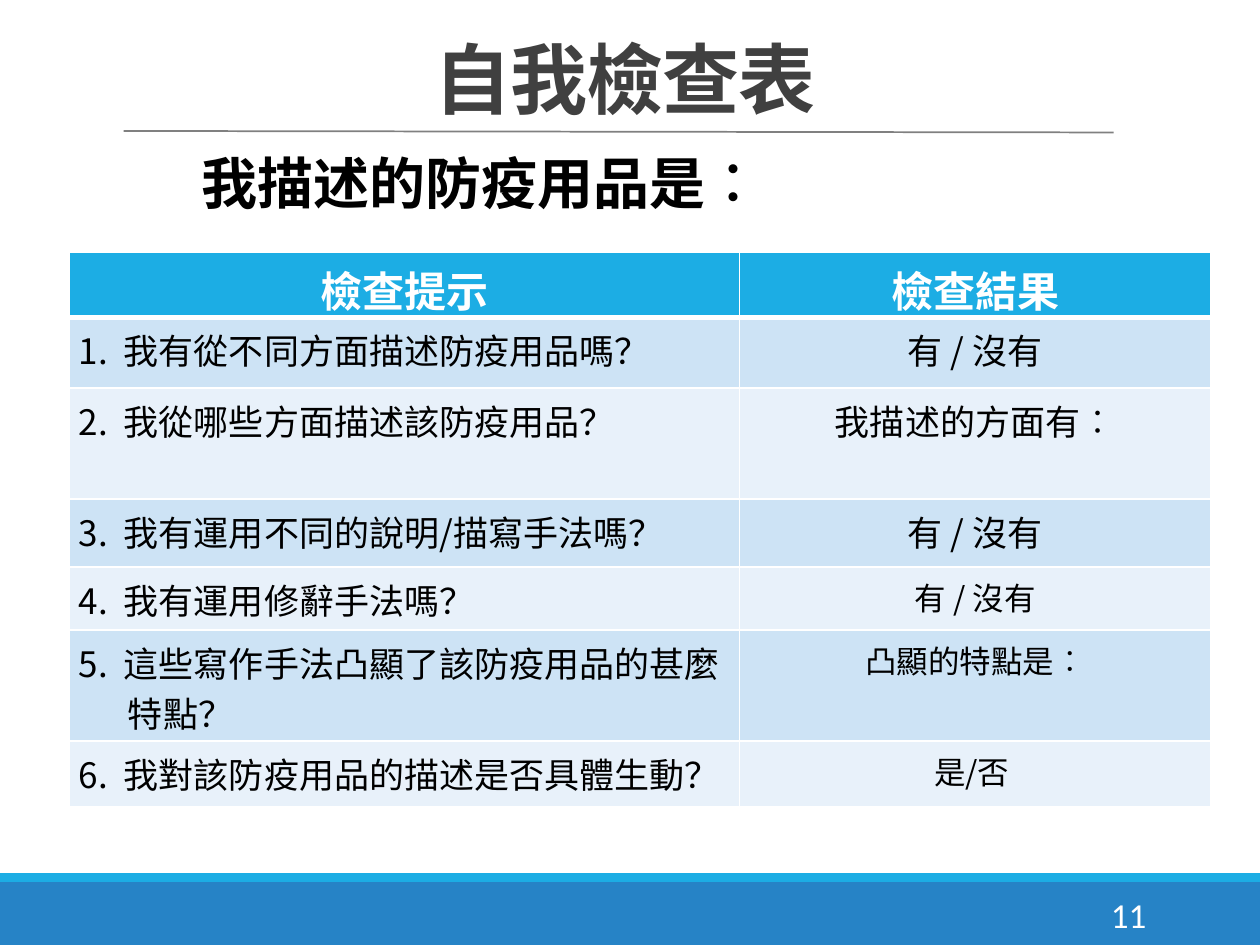
"""Builds the self-check slide for describing an epidemic-prevention item."""
import pptx
import pptx.dml.color
import pptx.enum.shapes
import pptx.enum.text
import pptx.oxml.ns
import pptx.util
from lxml import etree

Cm = pptx.util.Cm
Pt = pptx.util.Pt
ALIGN = pptx.enum.text.PP_ALIGN
ANCHOR = pptx.enum.text.MSO_ANCHOR
qn = pptx.oxml.ns.qn

COLORS = {
    "footer": "2683C6",
    "accent": "1CADE4",
    "title": "404040",
    "rule": "808080",
    "odd": "CDE3F5",
    "even": "E8F1FA",
    "text": "000000",
    "white": "FFFFFF",
}
CJK_FONT = "Noto Sans CJK SC"

COLUMN_WIDTHS = [13.51, 9.5]
HEADER = ("檢查提示", "檢查結果")
HEADER_HEIGHT = 1.32
# Each check: prompt, alignment, hanging indent, result, result size, row height.
CHECKS = [
    ("我有從不同方面描述防疫用品嗎？", ALIGN.JUSTIFY, 0.76, "有 / 沒有", 20, 1.42),
    ("我從哪些方面描述該防疫用品？", ALIGN.JUSTIFY, 0.76, "我描述的方面有︰", 20, 2.24),
    ("我有運用不同的說明/描寫手法嗎？", ALIGN.JUSTIFY, 1.27, "有 / 沒有", 20, 1.37),
    ("我有運用修辭手法嗎？", ALIGN.LEFT, 0.99, "有 / 沒有", 18, 1.27),
    ("這些寫作手法凸顯了該防疫用品的甚麼  特點？", ALIGN.LEFT, 0.99, "凸顯的特點是︰", 18, 2.24),
    ("我對該防疫用品的描述是否具體生動？", ALIGN.LEFT, 0.99, "是/否 ", 18, 1.32),
]


def rgb(name):
    return pptx.dml.color.RGBColor.from_string(COLORS[name])


def write(frame, text, size, color, align=ALIGN.LEFT, bold=False, font=CJK_FONT):
    frame.text = text
    frame.word_wrap = True
    paragraph = frame.paragraphs[0]
    paragraph.alignment = align
    run = paragraph.runs[0]
    run.font.name = font
    run.font.size = Pt(size)
    run.font.bold = bold
    run.font.color.rgb = rgb(color)
    etree.SubElement(run.font._element, qn("a:ea")).set("typeface", font)
    return paragraph


def add_band(slide, top, height, color):
    band = slide.shapes.add_shape(
        pptx.enum.shapes.MSO_SHAPE.RECTANGLE, 0, Cm(top), Cm(25.4), Cm(height))
    band.shadow.inherit = False
    band.fill.solid()
    band.fill.fore_color.rgb = rgb(color)
    band.line.fill.background()


def add_text(slide, left, top, width, height, text, size, color, **style):
    box = slide.shapes.add_textbox(Cm(left), Cm(top), Cm(width), Cm(height))
    write(box.text_frame, text, size, color, **style)
    return box.text_frame


def add_rule(slide):
    rule = slide.shapes.add_connector(
        pptx.enum.shapes.MSO_CONNECTOR.STRAIGHT, Cm(2.49), Cm(2.64), Cm(22.45), Cm(2.67))
    rule.line.color.rgb = rgb("rule")
    rule.line.width = Pt(1)
    etree.SubElement(rule._element.spPr, qn("a:effectLst"))


def set_borders(cell, top=1, bottom=1):
    properties = cell._tc.get_or_add_tcPr()
    widths = {"lnL": 1, "lnR": 1, "lnT": top, "lnB": bottom}
    for position, (side, width) in enumerate(widths.items()):
        border = etree.Element(qn(f"a:{side}"), w=str(Pt(width)))
        fill = etree.SubElement(border, qn("a:solidFill"))
        etree.SubElement(fill, qn("a:srgbClr"), val=COLORS["white"])
        properties.insert(position, border)


def fill_cell(cell, fill, text, size, color, **style):
    cell.margin_left = cell.margin_right = Cm(0.19)
    cell.margin_top, cell.margin_bottom = Cm(0.13), 0
    cell.fill.solid()
    cell.fill.fore_color.rgb = rgb(fill)
    return write(cell.text_frame, text, size, color, **style)


def add_checklist(slide):
    heights = [HEADER_HEIGHT] + [check[-1] for check in CHECKS]
    checklist = slide.shapes.add_table(
        len(heights), len(COLUMN_WIDTHS), Cm(1.4), Cm(5.08),
        Cm(sum(COLUMN_WIDTHS)), Cm(sum(heights))).table
    for column, width in zip(checklist.columns, COLUMN_WIDTHS):
        column.width = Cm(width)
    for row, height in zip(checklist.rows, heights):
        row.height = Cm(height)

    for column, heading in enumerate(HEADER):
        cell = checklist.cell(0, column)
        fill_cell(cell, "accent", heading, 24, "white", align=ALIGN.CENTER, bold=True)
        set_borders(cell, bottom=3)

    for number, (prompt, align, indent, result, size, _) in enumerate(CHECKS, 1):
        fill = "odd" if number % 2 else "even"
        prompt_cell, result_cell = checklist.rows[number].cells
        item = fill_cell(prompt_cell, fill, f"{number}.  {prompt}", 20, "text", align=align)
        item_properties = item._p.get_or_add_pPr()
        item_properties.set("marL", str(Cm(indent)))
        item_properties.set("indent", str(-Cm(indent)))
        fill_cell(result_cell, fill, result, size, "text", align=ALIGN.CENTER)
        for cell in (prompt_cell, result_cell):
            set_borders(cell, top=3 if number == 1 else 1)


def main():
    deck = pptx.Presentation()
    deck.slide_width, deck.slide_height = Cm(25.4), Cm(19.05)
    slide = deck.slides.add_slide(deck.slide_layouts[6])

    add_band(slide, 17.78, 1.27, "footer")
    add_band(slide, 17.6, 0.18, "accent")
    page_number = add_text(slide, 20.62, 17.93, 2.74, 1.02, "11", 20, "white",
                           align=ALIGN.RIGHT, font="Calibri")
    page_number.vertical_anchor = ANCHOR.MIDDLE

    title = add_text(slide, 2.29, 0.79, 20.95, 2.11, "自我檢查表 ", 44, "title",
                     align=ALIGN.CENTER, bold=True).paragraphs[0]
    title.line_spacing = 0.85
    title.runs[0].font._element.set("spc", "-50")
    add_rule(slide)
    add_text(slide, 3.81, 2.87, 18.77, 1.63, "我描述的防疫用品是︰___________", 32, "text",
             bold=True)
    add_checklist(slide)
    deck.save("out.pptx")


if __name__ == "__main__":
    main()
